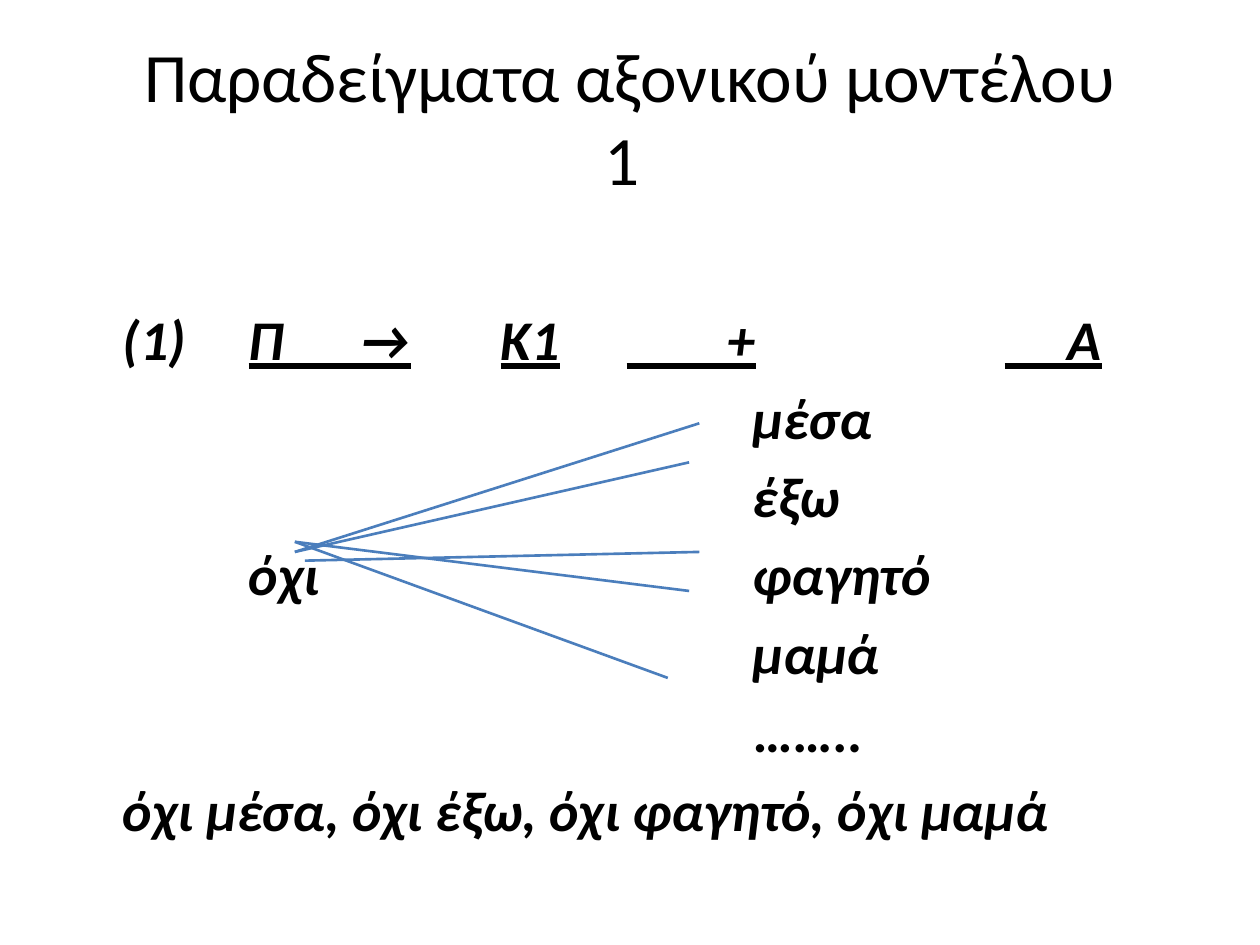
"""Builds a slide with an example of the pivot grammar model in Greek."""
from lxml import etree
from pptx import Presentation
from pptx.dml.color import RGBColor
from pptx.enum.shapes import MSO_CONNECTOR
from pptx.enum.text import MSO_ANCHOR, PP_ALIGN
from pptx.oxml.ns import qn
from pptx.util import Pt

LINE = MSO_CONNECTOR.STRAIGHT
MIDDLE = MSO_ANCHOR.MIDDLE
CENTER = PP_ALIGN.CENTER
BLACK = RGBColor(0x00, 0x00, 0x00)
BLUE = RGBColor(0x4B, 0x7E, 0xBC)
FONT = "Calibri"
INDENT = Pt(27)
TAB = Pt(72)
FAR = "\t" * 6

TITLE = "Παραδείγματα αξονικού μοντέλου\v1 "
RULE = ("\t(1)\t", "Π      →\tΚ1\t        +\t\t     Α")
DOTS = FAR + "…….."
ROWS = [
    RULE,
    (FAR + "μέσα",),
    (FAR + "έξω",),
    ("\t\tόχι\t\t\t\tφαγητό",),
    (FAR + "μαμά",),
    (DOTS,),
    ("\tόχι μέσα, όχι έξω, όχι φαγητό, όχι μαμά",),
]
LINKS = [
    ((168.5, 315.4), (399.6, 241.9)),
    ((168.5, 315.4), (393.8, 264.2)),
    ((174.2, 320.4), (399.6, 315.4)),
    ((168.5, 309.6), (393.8, 337.7)),
    ((168.5, 309.6), (381.6, 387.4)),
]


def style(par, size):
    par.font.name = FONT
    par.font.size = Pt(size)
    par.font.color.rgb = BLACK


def add_title(slide):
    title = slide.shapes.title
    title.left, title.top, title.width, title.height = Pt(36), Pt(21.6), Pt(648), Pt(90)
    frame = title.text_frame
    frame.text = TITLE
    frame.word_wrap = True
    frame.vertical_anchor = MIDDLE
    par = frame.paragraphs[0]
    par.alignment = CENTER
    style(par, 39.6)


def add_rows(slide):
    box = slide.shapes.add_textbox(Pt(36), Pt(170.5), Pt(648), Pt(311.4))
    frame = box.text_frame
    frame.word_wrap = True
    for num, row in enumerate(ROWS):
        par = frame.add_paragraph() if num else frame.paragraphs[0]
        props = par._p.get_or_add_pPr()
        props.set("marL", str(INDENT))
        props.set("indent", str(-INDENT))
        props.set("defTabSz", str(TAB))
        par.space_before = Pt(6.4)
        style(par, 32)
        par.font.bold = True
        par.font.italic = row[0] != DOTS
        for part, text in enumerate(row):
            run = par.add_run()
            run.text = text
            if part:
                run.font.underline = True


def add_links(slide):
    for start, end in LINKS:
        link = slide.shapes.add_connector(LINE, *map(Pt, start + end))
        link.line.color.rgb = BLUE
        link.line.width = Pt(1.5)
        etree.SubElement(link._element.spPr, qn("a:effectLst"))


def main():
    deck = Presentation()
    deck.slide_width, deck.slide_height = Pt(720), Pt(540)
    slide = deck.slides.add_slide(deck.slide_layouts[5])
    add_title(slide)
    add_rows(slide)
    add_links(slide)
    deck.save("out.pptx")


if __name__ == "__main__":
    main()
